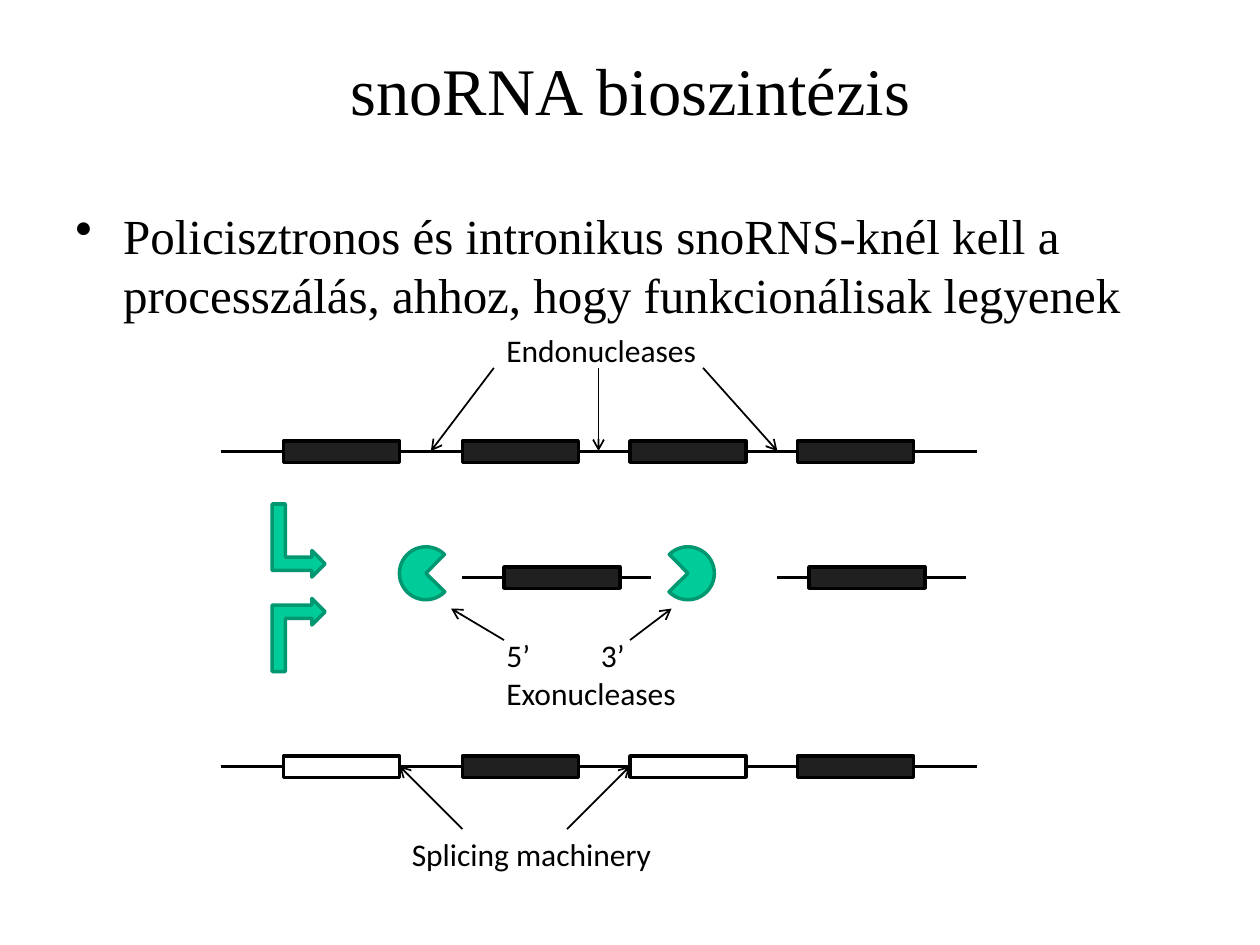
from lxml import etree
from pptx import Presentation
from pptx.dml.color import RGBColor
from pptx.enum.shapes import MSO_CONNECTOR, MSO_SHAPE
from pptx.enum.text import MSO_ANCHOR, PP_ALIGN
from pptx.oxml.ns import qn
from pptx.util import Inches, Pt

RECTANGLE = MSO_SHAPE.RECTANGLE
BENT_ARROW = MSO_SHAPE.BENT_UP_ARROW
PIE = MSO_SHAPE.PIE
STRAIGHT = MSO_CONNECTOR.STRAIGHT
CENTER = PP_ALIGN.CENTER
MIDDLE = MSO_ANCHOR.MIDDLE

BLACK, DARK, WHITE = "000000", "202020", "FFFFFF"
GREEN, DEEP_GREEN = "00CC99", "009771"
SERIF, SANS = "Times New Roman", "Calibri"

TITLE = "snoRNA bioszintézis"
BULLET = ("Policisztronos és intronikus snoRNS-knél kell a processzálás, "
          "ahhoz, hogy funkcionálisak legyenek")
LABELS = [
    (3.92, 2.58, 1.75, 0.4, ["Endonucleases"]),
    (3.92, 5, 1.75, 0.71, ["5’\t3’", "Exonucleases"]),
    (3.17, 6.58, 2.17, 0.71, ["Splicing machinery"]),
]

GENE_WIDTH, GENE_HEIGHT = 0.92, 0.17
GENE_LEFTS = [2.25, 3.67, 5, 6.33]
STRANDS = [
    (3.5, 1.75, 7.75, list(zip(GENE_LEFTS, [DARK] * 4))),
    (4.5, 3.67, 5.17, [(4, DARK)]),
    (4.5, 6.17, 7.67, [(6.42, DARK)]),
    (6, 1.75, 7.75, list(zip(GENE_LEFTS, [WHITE, DARK] * 2))),
]
ARROWS = [
    (3.92, 2.92, 3.42, 3.58),
    (4.75, 2.92, 4.75, 3.58),
    (5.58, 2.92, 6.17, 3.58),
    (4, 5.08, 3.58, 4.83),
    (5, 5.08, 5.33, 4.83),
    (3.67, 6.58, 3.17, 6.08),
    (4.5, 6.58, 5, 6.08),
]
ENZYMES = [
    (BENT_ARROW, 2.08, 4.08, 0.58, 90, None),
    (BENT_ARROW, 2.08, 4.83, 0.58, 270, "flipV"),
    (PIE, 3.17, 4.34, 0.42, 44.5, None),
    (PIE, 5.25, 4.34, 0.42, 315.5, "flipH"),
]


def color(value):
    return RGBColor.from_string(value)


def set_font(paragraph, name, size):
    paragraph.font.name = name
    paragraph.font.size = Pt(size)
    paragraph.font.color.rgb = color(BLACK)


def place(shape, left, top, width, height):
    shape.left, shape.top = Inches(left), Inches(top)
    shape.width, shape.height = Inches(width), Inches(height)


def add_box(page, left, top, width, height):
    box = page.shapes.add_textbox(*map(Inches, (left, top, width, height)))
    box.text_frame.word_wrap = True
    return box


def add_figure(page, kind, bounds, fill, line):
    shape = page.shapes.add_shape(kind, *map(Inches, bounds))
    shape.shadow.inherit = False
    shape.fill.solid()
    shape.fill.fore_color.rgb = color(fill)
    shape.line.color.rgb = color(line)
    shape.line.width = Pt(2)
    return shape


def add_line(page, ends, width, arrow=False):
    line = page.shapes.add_connector(STRAIGHT, *map(Inches, ends))
    line.line.color.rgb = color(BLACK)
    line.line.width = Pt(width)
    if arrow:
        etree.SubElement(line.line._get_or_add_ln(), qn("a:tailEnd"), type="arrow")
    etree.SubElement(line._element.spPr, qn("a:effectLst"))


def add_title(page):
    title = page.shapes.title
    place(title, 0.17, 0.08, 9.67, 1.25)
    frame = title.text_frame
    frame.text = TITLE
    frame.vertical_anchor = MIDDLE
    paragraph = frame.paragraphs[0]
    paragraph.alignment = CENTER
    set_font(paragraph, SERIF, 38)


def add_bullet(page):
    frame = add_box(page, 0.5, 1.58, 9, 5.12).text_frame
    frame.text = BULLET
    paragraph = frame.paragraphs[0]
    set_font(paragraph, SERIF, 28)
    properties = paragraph._p.get_or_add_pPr()
    properties.set("marL", str(Inches(0.38)))
    properties.set("indent", str(Inches(-0.38)))
    paragraph.space_before = Pt(5.6)
    bullet = etree.Element(qn("a:buChar"), char="•")
    properties.find(qn("a:spcBef")).addnext(bullet)


def add_label(page, left, top, width, height, lines):
    frame = add_box(page, left, top, width, height).text_frame
    for index, text in enumerate(lines):
        paragraph = frame.add_paragraph() if index else frame.paragraphs[0]
        if "\t" in text:
            properties = paragraph._p.get_or_add_pPr()
            tabs = etree.SubElement(properties, qn("a:tabLst"))
            etree.SubElement(tabs, qn("a:tab"), pos=str(Inches(0.75)), algn="l")
        paragraph.text = text
        set_font(paragraph, SANS, 18)


def main():
    deck = Presentation()
    deck.slide_width, deck.slide_height = Inches(10), Inches(7.5)
    page = deck.slides.add_slide(deck.slide_layouts[5])
    add_title(page)
    add_bullet(page)

    for top, start, end, genes in STRANDS:
        middle = top + GENE_HEIGHT / 2
        add_line(page, (start, middle, end, middle), 1.75)
        for left, fill in genes:
            bounds = (left, top, GENE_WIDTH, GENE_HEIGHT)
            add_figure(page, RECTANGLE, bounds, fill, BLACK)

    for kind, left, top, width, rotation, flip in ENZYMES:
        shape = add_figure(page, kind, (left, top, width, 0.42), GREEN, DEEP_GREEN)
        shape.rotation = rotation
        if flip:
            shape._element.spPr.find(qn("a:xfrm")).set(flip, "1")

    for ends in ARROWS:
        add_line(page, ends, 1, arrow=True)
    for label in LABELS:
        add_label(page, *label)

    deck.save("out.pptx")


if __name__ == "__main__":
    main()
